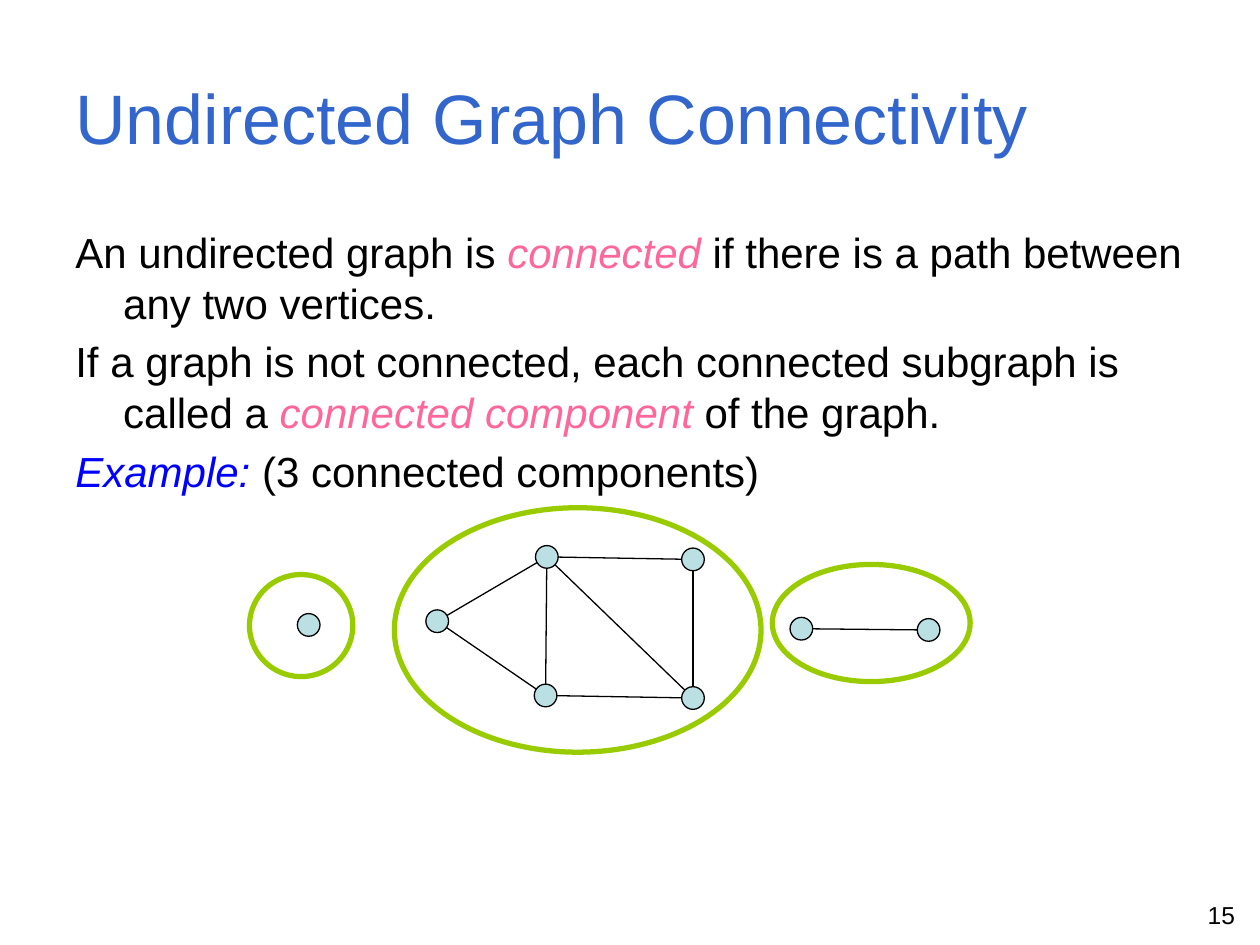
from lxml.etree import SubElement
from pptx import Presentation
from pptx.dml.color import RGBColor
from pptx.enum.shapes import MSO_CONNECTOR, MSO_SHAPE
from pptx.enum.text import MSO_ANCHOR, PP_ALIGN
from pptx.oxml.ns import qn
from pptx.util import Inches, Pt

BLACK, BLUE, PINK = "000000", "0000FF", "FF6699"
TITLE_BLUE, NODE_FILL, RING_GREEN = "3366CC", "BBE0E3", "99CC00"

TITLE = [[("Undirected Graph Connectivity", TITLE_BLUE, False)]]
PAGE_NUMBER = [[("15", BLACK, False)]]
BODY = [
    [("An undirected graph is ", BLACK, False),
     ("connected", PINK, True),
     (" if there is a path between any two vertices.", BLACK, False)],
    [("If a graph is not connected, each connected subgraph is called a ", BLACK, False),
     ("connected component", PINK, True),
     (" of the graph.", BLACK, False)],
    [("Example:", BLUE, True),
     (" (3 connected components)", BLACK, False)],
]

NODE_SIZE = 0.18
VERTICES = {
    "top left": (4.34, 4.42),
    "left": (3.47, 4.93),
    "bottom left": (4.33, 5.52),
    "bottom right": (5.5, 5.54),
    "top right": (5.5, 4.44),
    "pair left": (6.36, 4.99),
    "pair right": (7.37, 5.0),
    "single": (2.45, 4.96),
}
EDGES = [
    ("pair right", "pair left"),
    ("top left", "left"),
    ("left", "bottom left"),
    ("top left", "bottom right"),
    ("top left", "top right"),
    ("bottom left", "bottom right"),
    ("top left", "bottom left"),
    ("top right", "bottom right"),
]
COMPONENT_RINGS = [
    (1.98, 4.56, 0.82, 0.81),
    (6.13, 4.48, 1.57, 0.93),
    (3.13, 4.03, 2.91, 1.94),
]


def color(hex_code):
    return RGBColor.from_string(hex_code)


def add_text(slide, box, paragraphs, size, anchor=MSO_ANCHOR.TOP,
             align=PP_ALIGN.LEFT, space_before=0, hanging=0):
    frame = slide.shapes.add_textbox(*map(Inches, box)).text_frame
    frame.word_wrap = True
    frame.vertical_anchor = anchor
    for index, pieces in enumerate(paragraphs):
        paragraph = frame.add_paragraph() if index else frame.paragraphs[0]
        paragraph.alignment = align
        paragraph.space_before = Pt(space_before)
        if hanging:
            properties = paragraph._p.get_or_add_pPr()
            properties.set("marL", str(Inches(hanging)))
            properties.set("indent", str(-Inches(hanging)))
        for words, hex_code, italic in pieces:
            run = paragraph.add_run()
            run.text = words
            run.font.name = "Arial"
            run.font.size = Pt(size)
            run.font.italic = italic
            run.font.color.rgb = color(hex_code)


def add_edge(slide, start, end):
    edge = slide.shapes.add_connector(
        MSO_CONNECTOR.STRAIGHT, *map(Inches, VERTICES[start] + VERTICES[end]))
    edge.line.color.rgb = color(BLACK)
    edge.line.width = Pt(0.75)
    SubElement(edge._element.spPr, qn("a:effectLst"))


def add_ellipse(slide, box, line, width, fill=None):
    ellipse = slide.shapes.add_shape(MSO_SHAPE.OVAL, *map(Inches, box))
    ellipse.shadow.inherit = False
    ellipse.line.color.rgb = color(line)
    ellipse.line.width = Pt(width)
    if fill:
        ellipse.fill.solid()
        ellipse.fill.fore_color.rgb = color(fill)
    else:
        ellipse.fill.background()


def main():
    deck = Presentation()
    deck.slide_width, deck.slide_height = Inches(10), Inches(7.5)
    slide = deck.slides.add_slide(deck.slide_layouts[6])

    add_text(slide, (7.57, 7.09, 2.33, 0.31), PAGE_NUMBER, 14, align=PP_ALIGN.RIGHT)
    add_text(slide, (0.5, 0.3, 9, 1.25), TITLE, 40, anchor=MSO_ANCHOR.MIDDLE)
    add_text(slide, (0.5, 1.75, 9, 4.95), BODY, 24, space_before=4.8, hanging=0.38)

    for start, end in EDGES:
        add_edge(slide, start, end)
    for x, y in VERTICES.values():
        node = (x - NODE_SIZE / 2, y - NODE_SIZE / 2, NODE_SIZE, NODE_SIZE)
        add_ellipse(slide, node, BLACK, 0.75, NODE_FILL)
    for ring in COMPONENT_RINGS:
        add_ellipse(slide, ring, RING_GREEN, 3)

    deck.save("out.pptx")


if __name__ == "__main__":
    main()
